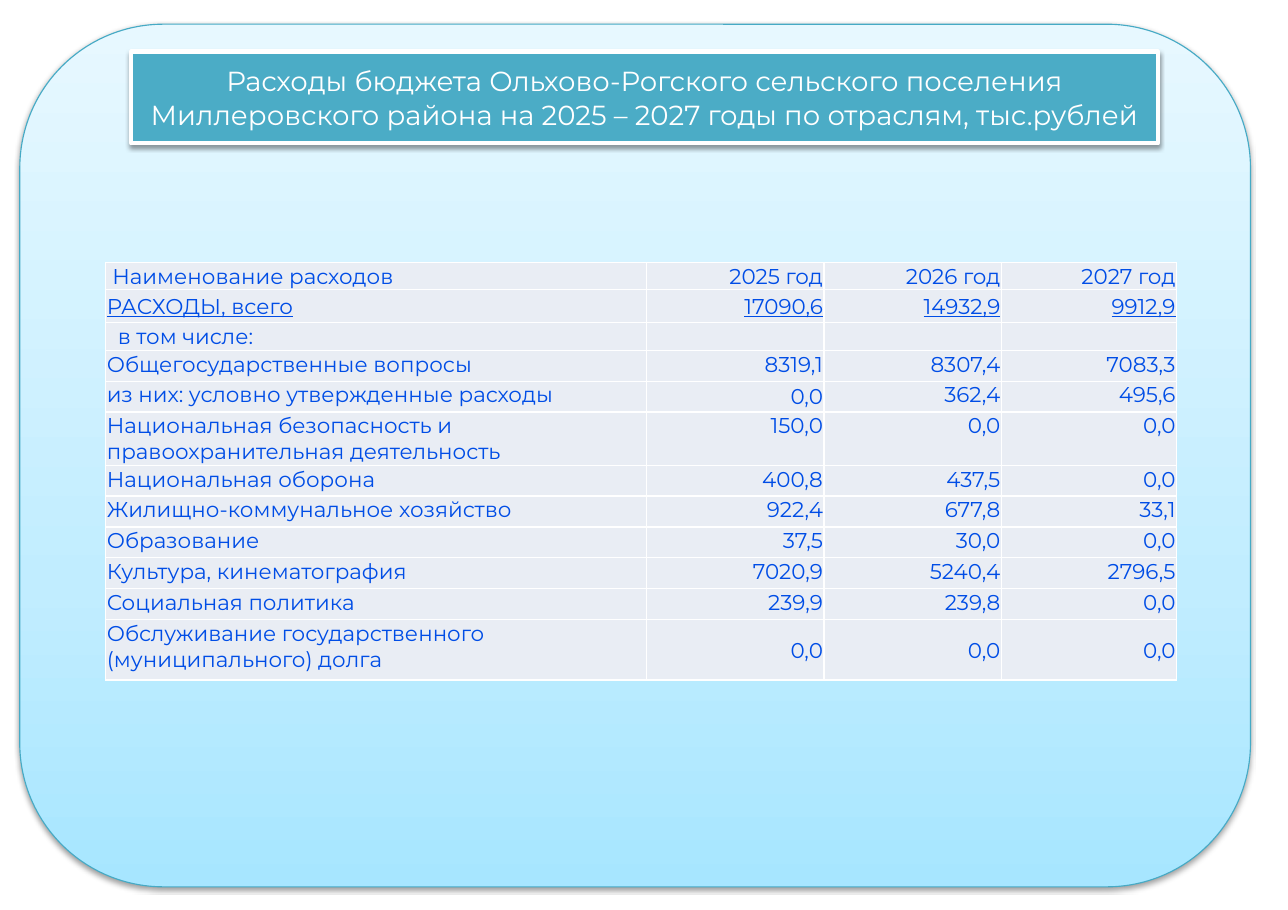
from copy import deepcopy

from lxml import etree
from pptx import Presentation
from pptx import util as u
from pptx.dml import color
from pptx.enum import shapes, text
from pptx.oxml import ns

FONT = "Montserrat"
WHITE = "FFFFFF"
TEXT_BLUE = "004DE6"
CELL_FILL = "E9EDF4"
PANEL_STOPS = [(0, "A7E6FF"), (0.35, "C1EDFF"), (1, "E7F8FF")]
TITLE = ("Расходы бюджета Ольхово-Рогского сельского поселения "
         "Миллеровского района на 2025 – 2027 годы по отраслям, тыс.рублей")

COLUMN_WIDTHS = [4.91, 1.61, 1.61, 1.59]
EXPENSES = [
    (0.25, "Наименование расходов", "2025 год", "2026 год", "2027 год"),
    (0.3, "РАСХОДЫ, всего", "17090,6", "14932,9", "9912,9"),
    (0.25, "в том числе:", "", "", ""),
    (0.28, "Общегосударственные вопросы", "8319,1", "8307,4", "7083,3"),
    (0.28, "из них: условно утвержденные расходы", "0,0", "362,4", "495,6"),
    (0.48, "Национальная безопасность и правоохранительная деятельность",
     "150,0", "0,0", "0,0"),
    (0.28, "Национальная оборона", "400,8", "437,5", "0,0"),
    (0.28, "Жилищно-коммунальное хозяйство", "922,4", "677,8", "33,1"),
    (0.28, "Образование", "37,5", "30,0", "0,0"),
    (0.28, "Культура, кинематография", "7020,9", "5240,4", "2796,5"),
    (0.28, "Социальная политика", "239,9", "239,8", "0,0"),
    (0.55, "Обслуживание государственного (муниципального) долга",
     "0,0", "0,0", "0,0"),
]
TOTAL_ROW = 1
LAST_ROW = len(EXPENSES) - 1
NAME_INDENTS = {0: 0.06, 2: 0.11}
MIDDLE_CELLS = {(4, 1)} | {(row, column) for row in (TOTAL_ROW, LAST_ROW)
                           for column in (1, 2, 3)} | {(TOTAL_ROW, 0)}


def rgb(value):
    return color.RGBColor.from_string(value)


def add_element(parent, tag, **attributes):
    return etree.SubElement(parent, ns.qn(tag), attributes)


def outline(shape, line_color, width):
    shape.line.color.rgb = rgb(line_color)
    shape.line.width = u.Pt(width)


def add_shadow(shape):
    shape.shadow.inherit = False
    effects = shape._element.spPr.find(ns.qn("a:effectLst"))
    shadow = add_element(effects, "a:outerShdw", blurRad=str(u.Pt(3.1)),
                         dist=str(u.Pt(1.6)), dir="5400000", rotWithShape="0")
    shade = add_element(shadow, "a:srgbClr", val="000000")
    add_element(shade, "a:alpha", val="38000")


def format_text(paragraph, size, font_color, alignment, underline=None):
    paragraph.alignment = alignment
    for run in paragraph.runs:
        run.font.name = FONT
        run.font.size = u.Pt(size)
        run.font.color.rgb = rgb(font_color)
        run.font.underline = underline
    if not paragraph.runs:
        add_element(paragraph._p, "a:endParaRPr", sz=str(size * 100))


def add_panel(slide):
    panel = slide.shapes.add_shape(
        shapes.MSO_SHAPE.ROUNDED_RECTANGLE,
        u.Inches(0.18), u.Inches(0.22), u.Inches(11.17), u.Inches(7.83))
    panel.fill.gradient()
    panel.fill.gradient_angle = 90
    stop_list = panel._element.spPr.find(".//" + ns.qn("a:gsLst"))
    stop_list.append(deepcopy(stop_list[0]))
    for stop, (position, stop_color) in zip(panel.fill.gradient_stops, PANEL_STOPS):
        stop.position = position
        stop.color.rgb = rgb(stop_color)
    outline(panel, "46AAC5", 0.75)
    add_shadow(panel)
    slide.shapes.title._element.addprevious(panel._element)


def fill_title(slide):
    title = slide.shapes.title
    title.left, title.top = u.Inches(1.19), u.Inches(0.47)
    title.width, title.height = u.Inches(9.32), u.Inches(0.83)
    title.fill.solid()
    title.fill.fore_color.rgb = rgb("4BACC6")
    outline(title, WHITE, 3)
    add_shadow(title)
    frame = title.text_frame
    frame.text = TITLE
    frame.word_wrap = True
    frame.auto_size = text.MSO_AUTO_SIZE.NONE
    frame.vertical_anchor = text.MSO_ANCHOR.MIDDLE
    format_text(frame.paragraphs[0], 18, WHITE, text.PP_ALIGN.CENTER)


def add_borders(cell):
    properties = cell._tc.get_or_add_tcPr()
    for side in ("a:lnL", "a:lnR", "a:lnT", "a:lnB"):
        line = add_element(properties, side, w=str(u.Pt(1)))
        fill = add_element(line, "a:solidFill")
        add_element(fill, "a:srgbClr", val=WHITE)


def fill_cell(cell, value, row, column):
    is_name = column == 0
    add_borders(cell)
    cell.fill.solid()
    cell.fill.fore_color.rgb = rgb(CELL_FILL)
    cell.margin_left = u.Inches(NAME_INDENTS.get(row, 0.01) if is_name else 0.01)
    cell.margin_right = cell.margin_top = u.Inches(0.01)
    cell.margin_bottom = 0
    is_middle = (row, column) in MIDDLE_CELLS
    cell.vertical_anchor = text.MSO_ANCHOR.MIDDLE if is_middle else text.MSO_ANCHOR.TOP
    cell.text_frame.text = value
    alignment = text.PP_ALIGN.LEFT if is_name else text.PP_ALIGN.RIGHT
    format_text(cell.text_frame.paragraphs[0], 14, TEXT_BLUE, alignment,
                underline=row == TOTAL_ROW)


def add_expense_table(slide):
    height = sum(expense[0] for expense in EXPENSES)
    table = slide.shapes.add_table(
        len(EXPENSES), len(COLUMN_WIDTHS), u.Inches(0.96), u.Inches(2.38),
        u.Inches(sum(COLUMN_WIDTHS)), u.Inches(height)).table
    for column, width in zip(table.columns, COLUMN_WIDTHS):
        column.width = u.Inches(width)
    table.first_row = False
    table.horz_banding = False
    for row, (row_height, *values) in enumerate(EXPENSES):
        table.rows[row].height = u.Inches(row_height)
        for column, value in enumerate(values):
            fill_cell(table.cell(row, column), value, row, column)


def main():
    presentation = Presentation()
    presentation.slide_width = u.Inches(11.69)
    presentation.slide_height = u.Inches(8.26)
    slide = presentation.slides.add_slide(presentation.slide_layouts[5])
    add_panel(slide)
    fill_title(slide)
    add_expense_table(slide)
    presentation.save("out.pptx")


if __name__ == "__main__":
    main()
